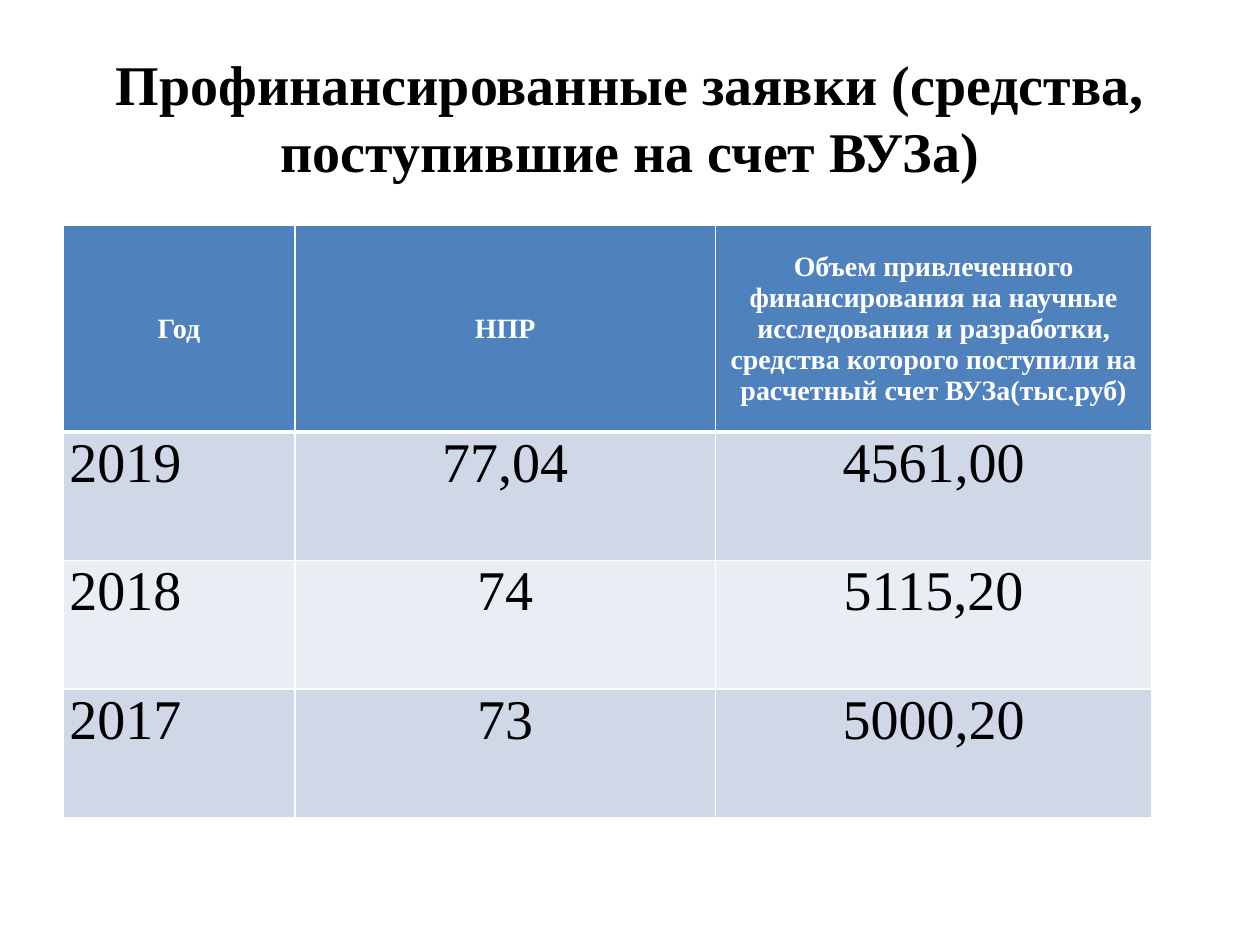
from lxml.etree import SubElement
from pptx import Presentation
from pptx.dml.color import RGBColor as RGB
from pptx.enum.text import MSO_ANCHOR as Anchor, PP_ALIGN as Align
from pptx.oxml.ns import qn
from pptx.util import Inches, Pt

THEME = {
    "font": "Times New Roman",
    "big": 32, "small": 16,
    "ink": "000000", "paper": "FFFFFF",
    "head": "4F81BD", "bands": ("D0D8E8", "E9EDF4"),
    "thin": 1, "thick": 3,
}
ROWS = [
    ("Год", "НПР", "Объем привлеченного финансирования на научные исследования "
     "и разработки, средства которого поступили на расчетный счет ВУЗа(тыс.руб)"),
    ("2019", "77,04", "4561,00"),
    ("2018", "74", "5115,20"),
    ("2017", "73", "5000,20"),
]
WIDTHS = (1.84, 3.34, 3.46)
HEIGHTS = (1.64,) + (1.02,) * 3


def write(frame, text, size, color, bold, align):
    frame.text = text
    para = frame.paragraphs[0]
    para.alignment = align
    font = para.runs[0].font
    look = {"name": THEME["font"], "size": Pt(size), "bold": bold}
    for key, value in look.items():
        setattr(font, key, value)
    font.color.rgb = RGB.from_string(color)


def rule(cell, side, width):
    """Draw one cell border; side is L, R, T or B."""
    line = SubElement(cell._tc.get_or_add_tcPr(), qn(f"a:ln{side}"), w=str(Pt(width)))
    fill = SubElement(line, qn("a:solidFill"))
    SubElement(fill, qn("a:srgbClr"), val=THEME["paper"])


deck = Presentation()
deck.slide_width, deck.slide_height = Inches(10), Inches(7.5)
wide, high = deck.slide_width, deck.slide_height
slide = deck.slides.add_slide(deck.slide_layouts[5])

title = slide.shapes.title
place = {"left": 0.05 * wide, "top": 0.04 * high,
         "width": 0.9 * wide, "height": high / 6}
for key, value in place.items():
    setattr(title, key, int(value))
title.text_frame.vertical_anchor = Anchor.MIDDLE
write(title.text_frame, "Профинансированные заявки (средства, поступившие на счет ВУЗа)",
      THEME["big"], THEME["ink"], True, Align.CENTER)

table = slide.shapes.add_table(
    len(ROWS), len(WIDTHS), int(0.05 * wide), Inches(1.79),
    Inches(sum(WIDTHS)), Inches(sum(HEIGHTS))).table
for col, width in zip(table.columns, WIDTHS):
    col.width = Inches(width)
for row, height in zip(table.rows, HEIGHTS):
    row.height = Inches(height)

inset = {"margin_left": Inches(0.05), "margin_right": Inches(0.05),
         "margin_top": 0, "margin_bottom": 0}
for r, row in enumerate(ROWS):
    head = r == 0
    for c, text in enumerate(row):
        cell = table.cell(r, c)
        for key, value in inset.items():
            setattr(cell, key, value)
        cell.vertical_anchor = Anchor.MIDDLE if head else Anchor.TOP
        for side in "LRTB":
            thick = (r, side) in ((0, "B"), (1, "T"))
            rule(cell, side, THEME["thick" if thick else "thin"])
        cell.fill.solid()
        shade = THEME["head"] if head else THEME["bands"][(r - 1) % 2]
        cell.fill.fore_color.rgb = RGB.from_string(shade)
        write(cell.text_frame, text,
              THEME["small" if head else "big"],
              THEME["paper" if head else "ink"], head,
              Align.CENTER if head or c else Align.LEFT)

deck.save("out.pptx")
